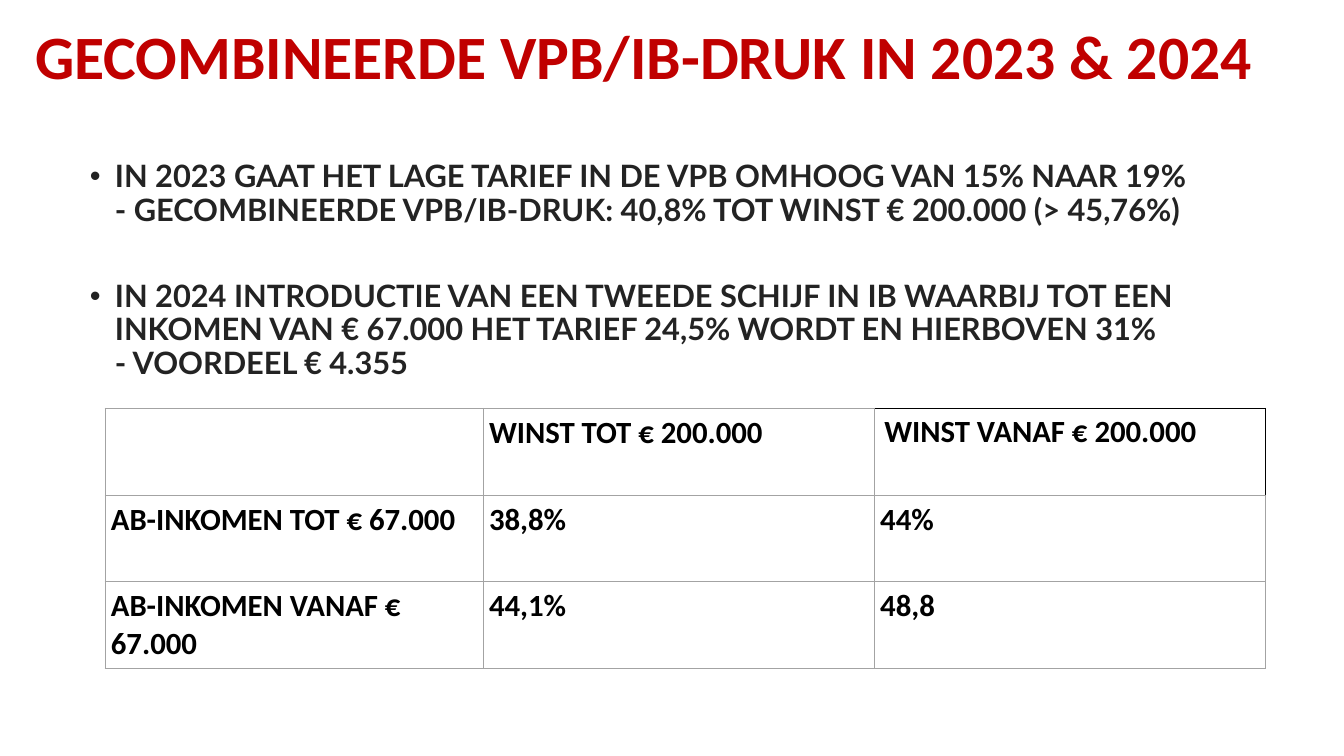
"""Build the slide on the combined VPB/IB tax burden in 2023 and 2024."""
from copy import deepcopy

from lxml import etree
from pptx import Presentation
from pptx import util as u
from pptx.dml.color import RGBColor
from pptx.enum import text
from pptx.oxml import ns

RED = RGBColor(0xC0, 0x00, 0x00)
DARK = RGBColor(0x23, 0x23, 0x23)
BLACK = RGBColor(0x00, 0x00, 0x00)
GREY = RGBColor(0xA3, 0xA3, 0xA3)

BULLETS = [
    ("IN 2023 GAAT HET LAGE TARIEF IN DE VPB OMHOOG VAN 15% NAAR 19%\n"
     "- GECOMBINEERDE VPB/IB-DRUK: 40,8% TOT WINST € 200.000 (> 45,76%)", 10),
    ("IN 2024 INTRODUCTIE VAN EEN TWEEDE SCHIJF IN IB WAARBIJ TOT EEN "
     "INKOMEN VAN € 67.000 HET TARIEF 24,5% WORDT EN HIERBOVEN 31%\n"
     "- VOORDEEL € 4.355", 38),
]
ROWS = [
    ["", "WINST TOT € 200.000", "WINST VANAF € 200.000"],
    ["AB-INKOMEN TOT € 67.000", "38,8%", "44%"],
    ["AB-INKOMEN VANAF € 67.000", "44,1%", "48,8"],
]


def write(p, words, name, size, color):
    p.text = words
    p.alignment = text.PP_ALIGN.LEFT
    for r in p.runs:
        for key, value in {"name": name, "size": u.Pt(size), "bold": True}.items():
            setattr(r.font, key, value)
        r.font.color.rgb = color
    for br in p._p.findall(ns.qn("a:br")):
        br.append(deepcopy(p.runs[0]._r.rPr))


def add_border(cell, side, color):
    ln = etree.SubElement(cell._tc.get_or_add_tcPr(), ns.qn(f"a:ln{side}"), w=str(u.Pt(0.5)))
    fill = etree.SubElement(ln, ns.qn("a:solidFill"))
    etree.SubElement(fill, ns.qn("a:srgbClr"), val=str(color))


prs = Presentation()
prs.slide_width, prs.slide_height = u.Inches(13.33), u.Inches(7.5)
s = prs.slides.add_slide(prs.slide_layouts[1])
title, body = s.placeholders
PLACES = [(title, (0.25, 0.1, 12.6, 0.98)), (body, (0.79, 1.55, 11.63, 5.21))]
for sp, place in PLACES:
    for key, value in zip(("left", "top", "width", "height"), place):
        setattr(sp, key, u.Inches(value))
    sp.text_frame.auto_size = text.MSO_AUTO_SIZE.NONE
    sp.text_frame.word_wrap = True

title.text_frame.vertical_anchor = text.MSO_ANCHOR.MIDDLE
p = title.text_frame.paragraphs[0]
write(p, "GECOMBINEERDE VPB/IB-DRUK IN 2023 & 2024", "Calibri", 44, RED)
p.line_spacing = 0.9

tf = body.text_frame
for i, (words, before) in enumerate(BULLETS):
    p = tf.add_paragraph() if i else tf.paragraphs[0]
    write(p, words, "Lato", 22, DARK)
    p.line_spacing = 0.9
    p.space_before = u.Pt(before)
    pPr = p._p.get_or_add_pPr()
    pPr.set("marL", str(u.Inches(0.25)))
    pPr.set("indent", str(u.Inches(-0.25)))
    etree.SubElement(pPr, ns.qn("a:buFont"), typeface="Arial")
    etree.SubElement(pPr, ns.qn("a:buChar"), char="•")

table = s.shapes.add_table(3, 3, u.Inches(1.04), u.Inches(4.05),
                           u.Inches(11.51), u.Inches(2.58)).table
table.first_row = table.horz_banding = False
for col, width in zip(table.columns, (3.75, 3.88, 3.88)):
    col.width = u.Inches(width)
for i, row in enumerate(ROWS):
    table.rows[i].height = u.Inches(0.86)
    for j, words in enumerate(row):
        cell = table.cell(i, j)
        corner = (i, j) == (0, 2)
        write(cell.text_frame.paragraphs[0], words, "Calibri", 22, BLACK)
        cell.vertical_anchor = text.MSO_ANCHOR.TOP
        if not corner:
            for side in ("left", "top", "right", "bottom"):
                setattr(cell, f"margin_{side}", u.Inches(0.06))
        for side in "LRTB":
            add_border(cell, side, BLACK if corner and side in "RT" else GREY)
        cell.fill.background()

prs.save("out.pptx")
